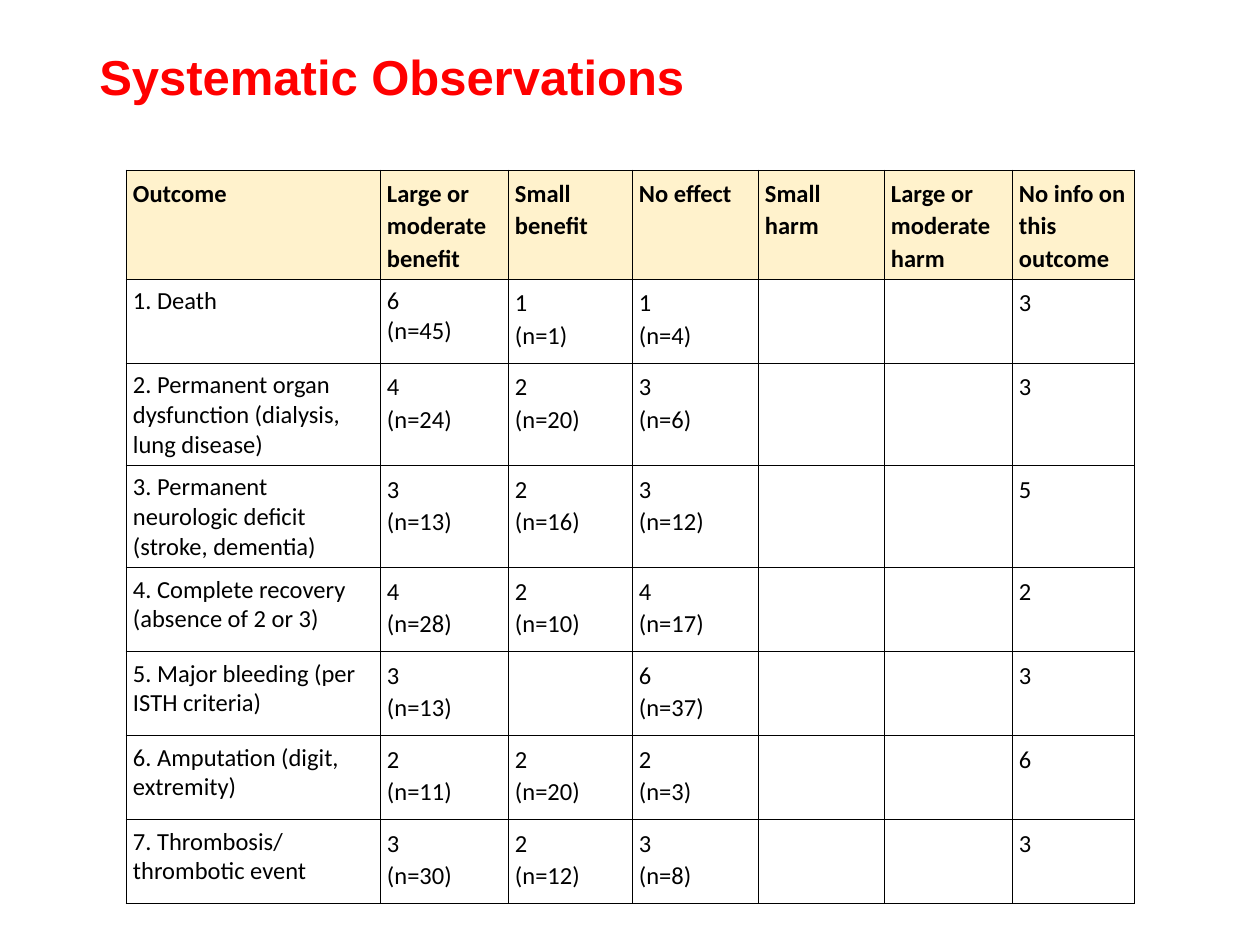
from lxml.etree import SubElement
from pptx import Presentation
from pptx.dml.color import RGBColor
from pptx.enum.text import MSO_ANCHOR
from pptx.oxml.ns import qn
from pptx.util import Emu, Pt

EMU_PER_PX = 914400 / 126

RED = RGBColor(0xFF, 0x00, 0x00)
BLACK = RGBColor(0x00, 0x00, 0x00)
CREAM = RGBColor(0xFF, 0xF2, 0xCC)

COLUMN_WIDTHS = [254, 128, 124, 126, 126, 128, 122]
ROW_HEIGHTS = [102, 84, 96, 96, 84, 84, 84, 84]
CELL_MARGIN = 7
LOOSE_SPACING = 1.08

HEADINGS = [
    "Outcome", "Large or moderate benefit", "Small benefit", "No effect",
    "Small harm", "Large or moderate harm", "No info on this outcome",
]
# Each effect is (reports, patients); the last value counts reports without info.
OUTCOMES = [
    ("1. Death", (6, 45), (1, 1), (1, 4), None, None, 3),
    ("2. Permanent organ dysfunction (dialysis, lung disease)",
     (4, 24), (2, 20), (3, 6), None, None, 3),
    ("3. Permanent neurologic deficit (stroke, dementia)",
     (3, 13), (2, 16), (3, 12), None, None, 5),
    ("4. Complete recovery (absence of 2 or 3)",
     (4, 28), (2, 10), (4, 17), None, None, 2),
    ("5. Major bleeding (per ISTH criteria)",
     (3, 13), None, (6, 37), None, None, 3),
    ("6. Amputation (digit, extremity)",
     (2, 11), (2, 20), (2, 3), None, None, 6),
    ("7. Thrombosis/ thrombotic event",
     (3, 30), (2, 12), (3, 8), None, None, 3),
]


def px(length):
    return Emu(round(length * EMU_PER_PX))


def set_font(paragraph, name, size, color, bold):
    font = paragraph.font
    font.name = name
    font.size = Pt(size)
    font.color.rgb = color
    font.bold = bold


def add_title(slide, text):
    title = slide.shapes.add_textbox(px(87), px(15), px(1086), px(129))
    frame = title.text_frame
    frame.word_wrap = True
    frame.vertical_anchor = MSO_ANCHOR.MIDDLE
    frame.text = text
    paragraph = frame.paragraphs[0]
    paragraph.line_spacing = 0.9
    set_font(paragraph, "Arial", 28, RED, True)


def add_borders(cell):
    properties = cell._tc.get_or_add_tcPr()
    for side in ("a:lnL", "a:lnR", "a:lnT", "a:lnB"):
        line = SubElement(properties, qn(side), w=str(Pt(0.5)))
        fill = SubElement(line, qn("a:solidFill"))
        SubElement(fill, qn("a:srgbClr"), val=str(BLACK))


def cell_text(value):
    if value is None:
        return ""
    if isinstance(value, tuple):
        reports, patients = value
        return f"{reports}\n(n={patients})"
    return str(value)


def fill_cell(cell, text, spacing, heading):
    cell.margin_left = cell.margin_right = px(CELL_MARGIN)
    cell.margin_top = cell.margin_bottom = px(CELL_MARGIN)
    add_borders(cell)
    if heading:
        cell.fill.solid()
        cell.fill.fore_color.rgb = CREAM
    else:
        cell.fill.background()
    cell.text_frame.text = text
    for paragraph in cell.text_frame.paragraphs:
        paragraph.line_spacing = spacing
        set_font(paragraph, "Calibri", 14, BLACK, heading)


def add_outcome_table(slide):
    rows = [HEADINGS, *OUTCOMES]
    table = slide.shapes.add_table(
        len(rows), len(HEADINGS), px(126), px(170),
        px(sum(COLUMN_WIDTHS)), px(sum(ROW_HEIGHTS)),
    ).table
    table.first_row = table.horz_banding = False
    for column, width in zip(table.columns, COLUMN_WIDTHS):
        column.width = px(width)
    for row, height in zip(table.rows, ROW_HEIGHTS):
        row.height = px(height)

    tight_cells = {(row, 0) for row in range(1, len(rows))} | {(1, 1)}
    for row, values in enumerate(rows):
        for column, value in enumerate(values):
            spacing = 1.0 if (row, column) in tight_cells else LOOSE_SPACING
            fill_cell(table.cell(row, column), cell_text(value), spacing, row == 0)


def main():
    presentation = Presentation()
    presentation.slide_width = px(1260)
    presentation.slide_height = px(945)
    slide = presentation.slides.add_slide(presentation.slide_layouts[6])
    add_title(slide, "Systematic Observations")
    add_outcome_table(slide)
    presentation.save("out.pptx")


if __name__ == "__main__":
    main()
